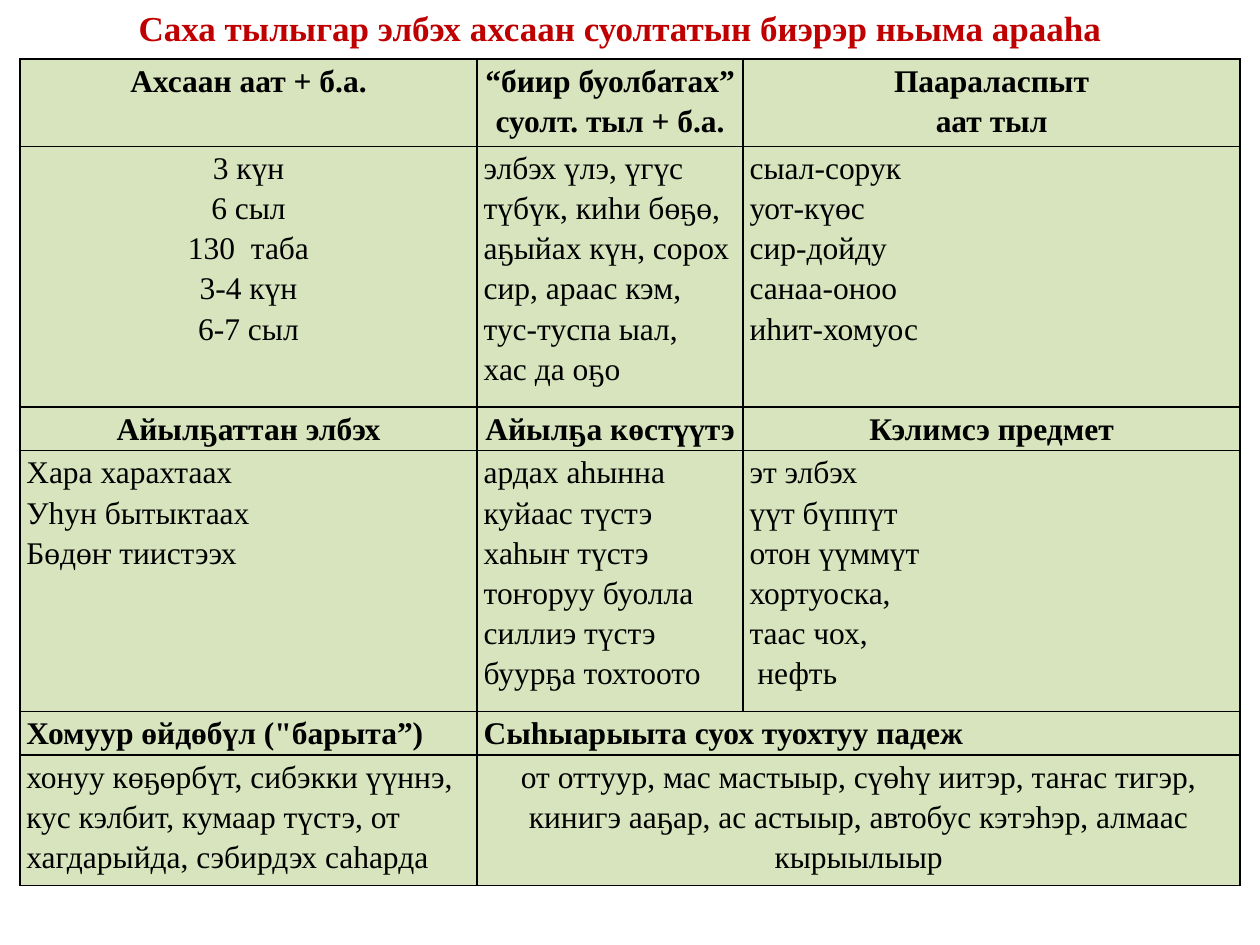
from lxml import etree
from pptx import Presentation
from pptx import util as u
from pptx.dml.color import RGBColor
from pptx.enum import text
from pptx.oxml.ns import qn

COLORS = {"title": "C00000", "body": "000000", "cell": "D7E4BD", "border": "000000"}
FONT = "Times New Roman"
LEFT, CENTER = text.PP_ALIGN.LEFT, text.PP_ALIGN.CENTER

COLUMN_WIDTHS = [9.22, 5.36, 10.02]
ROW_HEIGHTS = [1.76, 5.25, 0.87, 5.25, 0.87, 2.63]

# Rows alternate between headings and examples; each cell is (alignment, lines).
ROWS = [
    [
        (CENTER, ["Ахсаан аат + б.а."]),
        (CENTER, ["“биир буолбатах”", "суолт. тыл + б.а."]),
        (CENTER, ["Паараласпыт", "аат тыл"]),
    ],
    [
        (CENTER, ["3 күн", "6 сыл", "130  таба", "3-4 күн", "6-7 сыл"]),
        (LEFT, ["элбэх үлэ, үгүс түбүк, киһи бөҕө, аҕыйах күн, сорох сир, "
                "араас кэм, тус-туспа ыал,", "хас да оҕо"]),
        (LEFT, ["сыал-сорук", "уот-күөс", "сир-дойду", "санаа-оноо", "иһит-хомуос"]),
    ],
    [
        (CENTER, ["Айылҕаттан элбэх"]),
        (CENTER, ["Айылҕа көстүүтэ"]),
        (CENTER, ["Кэлимсэ предмет"]),
    ],
    [
        (LEFT, ["Хара харахтаах", "Уһун бытыктаах", "Бөдөҥ тиистээх"]),
        (LEFT, ["ардах аһынна", "куйаас түстэ", "хаһыҥ түстэ",
                "тоҥоруу буолла", "силлиэ түстэ", "буурҕа тохтоото"]),
        (LEFT, ["эт элбэх", "үүт бүппүт", "отон үүммүт",
                "хортуоска,", "таас чох,", " нефть"]),
    ],
    [
        (LEFT, ['Хомуур өйдөбүл ("барыта”)']),
        (LEFT, ["Сыһыарыыта суох туохтуу падеж"]),
    ],
    [
        (LEFT, ["хонуу көҕөрбүт, сибэкки үүннэ, кус кэлбит, кумаар түстэ, "
                "от хагдарыйда, сэбирдэх саһарда"]),
        (CENTER, ["от оттуур, мас мастыыр, сүөһү иитэр, таҥас тигэр, "
                  "кинигэ ааҕар, ас астыыр, автобус кэтэһэр, алмаас кырыылыыр"]),
    ],
]


def write_lines(frame, lines, size=18, color="body", bold=False, align=LEFT, spacing=None):
    for index, line in enumerate(lines):
        paragraph = frame.paragraphs[0] if index == 0 else frame.add_paragraph()
        paragraph.alignment = align
        paragraph.line_spacing = spacing
        run = paragraph.add_run()
        run.text = line
        run.font.name = FONT
        run.font.size = u.Pt(size)
        run.font.bold = bold
        run.font.color.rgb = RGBColor.from_string(COLORS[color])


class SlideBuilder:
    def __init__(self, presentation):
        self.slide = presentation.slides.add_slide(presentation.slide_layouts[5])

    def title(self, line, left, top, width, height):
        shape = self.slide.shapes.title
        shape.left, shape.top = u.Cm(left), u.Cm(top)
        shape.width, shape.height = u.Cm(width), u.Cm(height)
        frame = shape.text_frame
        frame.word_wrap = True
        frame.auto_size = text.MSO_AUTO_SIZE.SHAPE_TO_FIT_TEXT
        frame.vertical_anchor = text.MSO_ANCHOR.MIDDLE
        write_lines(frame, [line], size=20, color="title", bold=True, align=CENTER)

    def table(self, rows, left, top, widths, heights):
        table = self.slide.shapes.add_table(
            len(heights), len(widths), u.Cm(left), u.Cm(top),
            u.Cm(sum(widths)), u.Cm(sum(heights))).table
        table.first_row = table.horz_banding = False
        for column, width in zip(table.columns, widths):
            column.width = u.Cm(width)
        for row, height in zip(table.rows, heights):
            row.height = u.Cm(height)
        for row_index, cells in enumerate(rows):
            for column_index in range(len(widths)):
                self.style_cell(table.cell(row_index, column_index))
            if len(cells) < len(widths):
                table.cell(row_index, len(cells) - 1).merge(
                    table.cell(row_index, len(widths) - 1))
            for column_index, (align, lines) in enumerate(cells):
                write_lines(table.cell(row_index, column_index).text_frame, lines,
                            bold=row_index % 2 == 0, align=align, spacing=1.15)

    def style_cell(self, cell):
        """Set the margins, the border on all four sides and the fill."""
        cell.margin_left = cell.margin_right = u.Cm(0.13)
        cell.margin_top = cell.margin_bottom = 0
        properties = cell._tc.get_or_add_tcPr()
        for side in ("a:lnL", "a:lnR", "a:lnT", "a:lnB"):
            line = etree.SubElement(properties, qn(side), w=str(u.Pt(1)))
            fill = etree.SubElement(line, qn("a:solidFill"))
            etree.SubElement(fill, qn("a:srgbClr"), val=COLORS["border"])
        cell.fill.solid()
        cell.fill.fore_color.rgb = RGBColor.from_string(COLORS["cell"])


def main():
    presentation = Presentation()
    presentation.slide_width, presentation.slide_height = u.Cm(25.4), u.Cm(19.05)
    builder = SlideBuilder(presentation)
    builder.title("Саха тылыгар элбэх ахсаан суолтатын биэрэр ньыма арааһа",
                  0, 0, 25, 1.11)
    builder.table(ROWS, 0.4, 1.19, COLUMN_WIDTHS, ROW_HEIGHTS)
    presentation.save("out.pptx")


if __name__ == "__main__":
    main()
